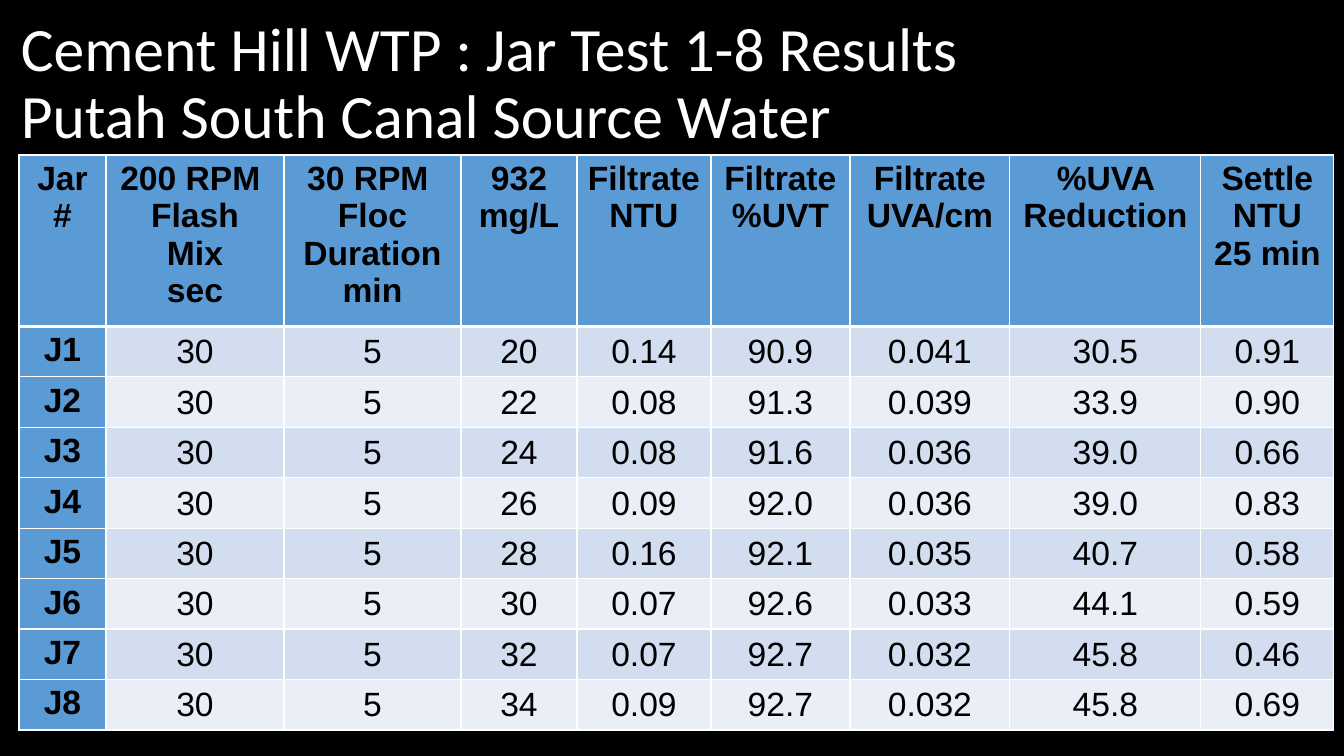
from dataclasses import dataclass

from pptx import Presentation, util as u
from pptx.dml.color import RGBColor
from pptx.enum import text
from pptx.oxml.ns import qn
from lxml import etree

PX = 914400 / 100.8  # EMU per pixel


@dataclass(frozen=True)
class Theme:
    background: str = "000000"
    title: str = "FFFFFF"
    ink: str = "000000"
    rule: str = "FFFFFF"
    header: str = "5B9BD5"
    bands: tuple = ("D2DEEF", "EAEFF7")
    title_font: str = "Calibri"
    table_font: str = "Arial"
    title_size: int = 44
    table_size: int = 24
    thin: int = 1
    thick: int = 3


THEME = Theme()

COLUMN_WIDTHS = [87, 178, 177, 116, 134, 139, 160, 191, 133]
HEADER_HEIGHT, ROW_HEIGHT = 105, 44  # minimum heights; rows grow to fit their text

HEADINGS = [
    "Jar\n#", "200 RPM \nFlash\nMix\nsec", "30 RPM \nFloc\nDuration\nmin",
    "932\nmg/L", "Filtrate\nNTU", "Filtrate\n%UVT", "Filtrate\nUVA/cm",
    "%UVA Reduction", "Settle\nNTU\n25 min",
]
JARS = [
    ["J1", "30", "5", "20", "0.14", "90.9", "0.041", "30.5", "0.91"],
    ["J2", "30", "5", "22", "0.08", "91.3", "0.039", "33.9", "0.90"],
    ["J3", "30", "5", "24", "0.08", "91.6", "0.036", "39.0", "0.66"],
    ["J4", "30", "5", "26", "0.09", "92.0", "0.036", "39.0", "0.83"],
    ["J5", "30", "5", "28", "0.16", "92.1", "0.035", "40.7", "0.58"],
    ["J6", "30", "5", "30", "0.07", "92.6", "0.033", "44.1", "0.59"],
    ["J7", "30", "5", "32", "0.07", "92.7", "0.032", "45.8", "0.46"],
    ["J8", "30", "5", "34", "0.09", "92.7", "0.032", "45.8", "0.69"],
]


def px(length):
    return u.Emu(round(length * PX))


def rgb(colour):
    return RGBColor.from_string(colour)


def style_paragraph(paragraph, font, size, colour, bold=False):
    paragraph.font.name = font
    paragraph.font.size = u.Pt(size)
    paragraph.font.color.rgb = rgb(colour)
    paragraph.font.bold = bold


def add_title(slide, wording, left, top, width, height):
    title = slide.shapes.add_textbox(px(left), px(top), px(width), px(height))
    frame = title.text_frame
    frame.word_wrap = True
    frame.vertical_anchor = text.MSO_ANCHOR.MIDDLE
    heading = frame.paragraphs[0]
    heading.text = wording
    heading.line_spacing = 0.9
    style_paragraph(heading, THEME.title_font, THEME.title_size, THEME.title)


def set_borders(cell, top, bottom):
    """Rule all four sides; borders must come before the fill in tcPr."""
    properties = cell._tc.get_or_add_tcPr()
    widths = {"a:lnL": THEME.thin, "a:lnR": THEME.thin, "a:lnT": top, "a:lnB": bottom}
    for position, (side, width) in enumerate(widths.items()):
        line = etree.Element(qn(side), w=str(u.Pt(width)))
        fill = etree.SubElement(line, qn("a:solidFill"))
        etree.SubElement(fill, qn("a:srgbClr"), val=THEME.rule)
        properties.insert(position, line)


def fill_cell(cell, wording, row, column):
    is_heading = row == 0 or column == 0
    cell.text = wording
    for paragraph in cell.text_frame.paragraphs:
        paragraph.alignment = text.PP_ALIGN.CENTER
        style_paragraph(paragraph, THEME.table_font, THEME.table_size, THEME.ink, is_heading)
    if not is_heading:
        cell.vertical_anchor = text.MSO_ANCHOR.MIDDLE
        cell.margin_left = cell.margin_top = cell.margin_right = px(1)
        cell.margin_bottom = 0
    cell.fill.solid()
    cell.fill.fore_color.rgb = rgb(THEME.header if is_heading else THEME.bands[(row - 1) % 2])
    set_borders(
        cell,
        top=THEME.thick if row == 1 else THEME.thin,
        bottom=THEME.thick if row == 0 else THEME.thin,
    )


def add_results(slide, rows, left, top):
    heights = [HEADER_HEIGHT] + [ROW_HEIGHT] * (len(rows) - 1)
    results = slide.shapes.add_table(
        len(rows), len(COLUMN_WIDTHS), px(left), px(top),
        px(sum(COLUMN_WIDTHS)), px(sum(heights)),
    ).table
    results.first_col = True
    for column, width in zip(results.columns, COLUMN_WIDTHS):
        column.width = px(width)
    for table_row, height in zip(results.rows, heights):
        table_row.height = px(height)
    for r, values in enumerate(rows):
        for c, wording in enumerate(values):
            fill_cell(results.cell(r, c), wording, r, c)


def main():
    deck = Presentation()
    deck.slide_width, deck.slide_height = px(1344), px(756)
    slide = deck.slides.add_slide(deck.slide_layouts[6])

    # Background
    slide.background.fill.solid()
    slide.background.fill.fore_color.rgb = rgb(THEME.background)

    # Title, with a line break inside one paragraph
    add_title(
        slide, "Cement Hill WTP : Jar Test 1-8 Results\vPutah South Canal Source Water",
        11, 12, 1240, 146,
    )

    # Jar test results
    add_results(slide, [HEADINGS] + JARS, 19, 155)

    deck.save("out.pptx")


if __name__ == "__main__":
    main()
